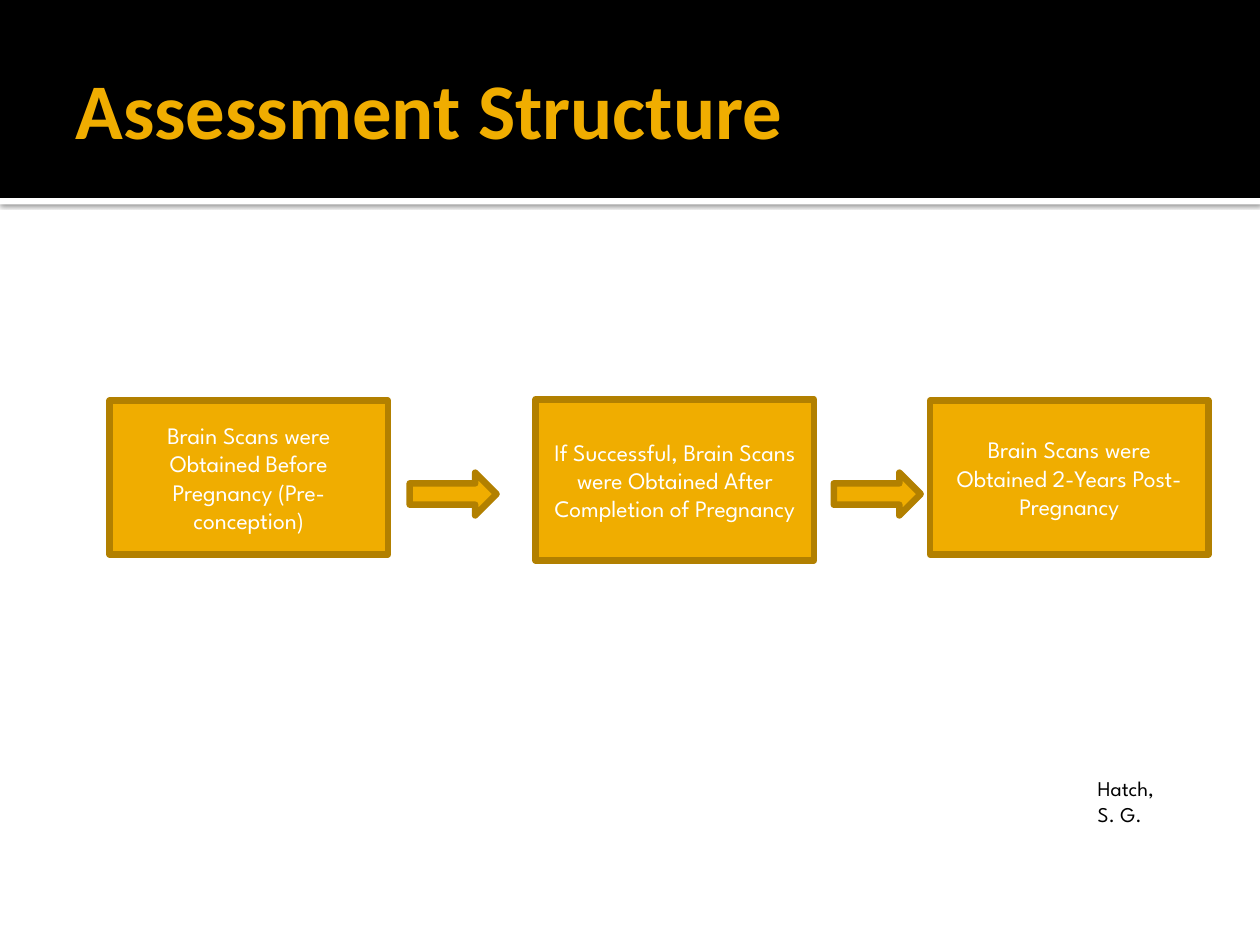
from dataclasses import dataclass

import pptx
import pptx.dml.color
import pptx.enum.shapes
import pptx.enum.text
import pptx.oxml
import pptx.oxml.ns
import pptx.util

Cm = pptx.util.Cm
Pt = pptx.util.Pt
Shape = pptx.enum.shapes.MSO_SHAPE
Align = pptx.enum.text.PP_ALIGN
Anchor = pptx.enum.text.MSO_ANCHOR

GOLD, BRONZE, BLACK, WHITE = "F0AD00", "B28000", "000000", "FFFFFF"
BODY_FONT = "League Spartan"
SLIDE_WIDTH = 25.4


@dataclass(frozen=True)
class Box:
    left: float
    top: float
    width: float
    height: float

    def lengths(self) -> tuple:
        return tuple(Cm(v) for v in (self.left, self.top, self.width, self.height))


@dataclass(frozen=True)
class Stage:
    text: str
    box: Box


@dataclass(frozen=True)
class Style:
    font: str
    size: float
    color: str
    bold: bool = False
    align: Align = Align.LEFT
    anchor: Anchor = Anchor.MIDDLE
    insets: tuple = (0.25, 0.13, 0.25, 0.13)


TITLE = Style("Calibri", 45, GOLD, bold=True, insets=(0.25, 0.13, 0.13, 0.13))
STAGE = Style(BODY_FONT, 13.5, WHITE, align=Align.CENTER)
CREDIT = Style(BODY_FONT, 12, BLACK, anchor=Anchor.BOTTOM, insets=(0.13, 0.13, 0.13, 0))

STAGES = (
    Stage("Brain Scans were Obtained Before Pregnancy (Pre-conception)",
          Box(2.21, 8.08, 5.61, 3.1)),
    Stage("If Successful, Brain Scans were Obtained After Completion of Pregnancy",
          Box(10.8, 8.05, 5.61, 3.25)),
    Stage("Brain Scans were Obtained 2-Years Post-Pregnancy",
          Box(18.75, 8.08, 5.61, 3.1)),
)
ARROW_LEFTS = (8.26, 16.81)


def rgb(color: str):
    return pptx.dml.color.RGBColor.from_string(color)


def write(shape, text: str, style: Style) -> None:
    frame = shape.text_frame
    frame.word_wrap = True
    frame.vertical_anchor = style.anchor
    (frame.margin_left, frame.margin_top,
     frame.margin_right, frame.margin_bottom) = (Cm(v) for v in style.insets)
    paragraph = frame.paragraphs[0]
    paragraph.alignment = style.align
    run = paragraph.add_run()
    run.text = text
    run.font.name = style.font
    run.font.size = Pt(style.size)
    run.font.bold = style.bold
    run.font.color.rgb = rgb(style.color)


def add_filled(slide, kind: Shape, box: Box, fill: str, outline: str = ""):
    shape = slide.shapes.add_shape(kind, *box.lengths())
    shape.shadow.inherit = False
    shape.fill.solid()
    shape.fill.fore_color.rgb = rgb(fill)
    if outline:
        shape.line.color.rgb = rgb(outline)
        shape.line.width = Pt(3.78)
    else:
        shape.line.fill.background()
    return shape


def add_text(slide, text: str, box: Box, style: Style) -> None:
    write(slide.shapes.add_textbox(*box.lengths()), text, style)


def cast_shadow(shape, color: str, opacity: int, blur: float, distance: float) -> None:
    effects = shape._element.spPr.find(pptx.oxml.ns.qn("a:effectLst"))
    effects.append(pptx.oxml.parse_xml(
        f'<a:outerShdw {pptx.oxml.ns.nsdecls("a")} blurRad="{Pt(blur)}" '
        f'dist="{Pt(distance)}" dir="5400000" algn="t" rotWithShape="0">'
        f'<a:srgbClr val="{color}"><a:alpha val="{opacity * 1000}"/></a:srgbClr>'
        "</a:outerShdw>"))


def main() -> None:
    deck = pptx.Presentation()
    deck.slide_width, deck.slide_height = Cm(SLIDE_WIDTH), Cm(19.05)
    slide = deck.slides.add_slide(deck.slide_layouts[6])

    header_edge = add_filled(slide, Shape.RECTANGLE, Box(0, 3.99, SLIDE_WIDTH, 0.13), WHITE)
    cast_shadow(header_edge, BLACK, opacity=60, blur=2.5, distance=0.8)
    add_filled(slide, Shape.RECTANGLE, Box(0, 0, SLIDE_WIDTH, 3.99), BLACK)
    add_text(slide, "Assessment Structure", Box(1.27, 0.43, 22.86, 3.48), TITLE)
    add_text(slide, "Hatch, S. G.", Box(22, 15.9, 1.83, 0.76), CREDIT)

    for left in ARROW_LEFTS:
        add_filled(slide, Shape.RIGHT_ARROW, Box(left, 9.53, 1.75, 0.86), GOLD, BRONZE)
    for stage in STAGES:
        panel = add_filled(slide, Shape.RECTANGLE, stage.box, GOLD, BRONZE)
        write(panel, stage.text, STAGE)

    deck.save("out.pptx")


if __name__ == "__main__":
    main()
